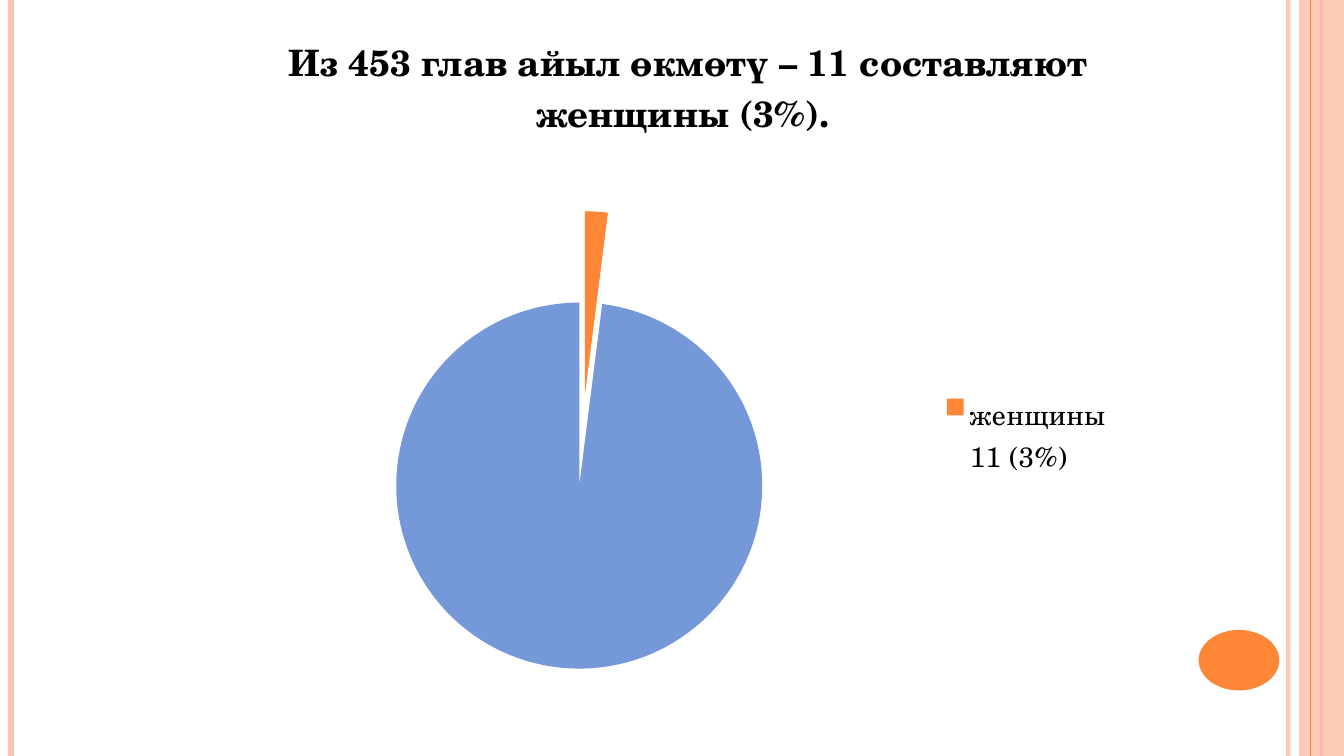
import pptx
import pptx.chart.data
import pptx.dml.color
import pptx.enum.chart
import pptx.enum.shapes
import pptx.enum.text
import pptx.oxml
import pptx.oxml.ns
import pptx.util

Pt = pptx.util.Pt
qn = pptx.oxml.ns.qn
WIDTH, HEIGHT = 960, 540
FONT = "TeX Gyre Schola"
COLORS = {
    "text": "000000",
    "peach": "FEC3AE",
    "orange": "FE8637",
    "blue": "7598D9",
    "red": "B32C16",
    "yellow": "F5CD2D",
}


def rgb(name):
    return pptx.dml.color.RGBColor.from_string(COLORS[name])


def child(parent, tag, **attributes):
    element = pptx.oxml.parse_xml(f"<{tag} {pptx.oxml.ns.nsdecls(tag.split(':')[0])}/>")
    for name, value in attributes.items():
        element.set(name, str(value))
    parent.append(element)
    return element


def set_opacity(shape, percent):
    for color in shape._element.spPr.iter(qn("a:srgbClr")):
        child(color, "a:alpha", val=percent * 1000)


def set_layout(parent, follower, x, y, w, h, inner=False):
    """Place a chart part by fractions of the chart, ahead of its follower."""
    for old in parent.findall(qn("c:layout")):
        parent.remove(old)
    layout = child(parent, "c:layout")
    manual = child(layout, "c:manualLayout")
    if inner:
        child(manual, "c:layoutTarget", val="inner")
    for mode in ("xMode", "yMode"):
        child(manual, f"c:{mode}", val="edge")
    for name, value in {"x": x, "y": y, "w": w, "h": h}.items():
        child(manual, f"c:{name}", val=value)
    parent.find(qn(follower)).addprevious(layout)


class SlideBuilder:
    def __init__(self, slide):
        self.slide = slide

    def title(self, text, left, top, width, height):
        box = self.slide.shapes.title
        box.left, box.top, box.width, box.height = map(Pt, (left, top, width, height))
        frame = box.text_frame
        frame.text = text
        frame.word_wrap = True
        frame.auto_size = pptx.enum.text.MSO_AUTO_SIZE.NONE
        frame.vertical_anchor = pptx.enum.text.MSO_ANCHOR.TOP
        para = frame.paragraphs[0]
        para.alignment = pptx.enum.text.PP_ALIGN.CENTER
        para.line_spacing = 1.15
        para.space_before = Pt(0)
        para.space_after = Pt(10)
        para.font.name = FONT
        para.font.size = Pt(26)
        para.font.bold = True
        para.font.color.rgb = rgb("text")

    def vertical_line(self, x, color, weight, opacity=100):
        line = self.slide.shapes.add_connector(
            pptx.enum.shapes.MSO_CONNECTOR.STRAIGHT, Pt(x), Pt(0), Pt(x), Pt(HEIGHT))
        line.line.color.rgb = rgb(color)
        line.line.width = Pt(weight)
        if opacity < 100:
            set_opacity(line, opacity)
        child(line._element.spPr, "a:effectLst")

    def shape(self, kind, color, left, top, width, height, opacity=100):
        shape = self.slide.shapes.add_shape(kind, *map(Pt, (left, top, width, height)))
        shape.shadow.inherit = False
        shape.fill.solid()
        shape.fill.fore_color.rgb = rgb(color)
        shape.line.fill.background()
        if opacity < 100:
            set_opacity(shape, opacity)

    def pie(self, categories, values, colors, left, top, width, height):
        data = pptx.chart.data.CategoryChartData()
        data.categories = categories
        data.add_series("Series 1", values)
        chart = self.slide.shapes.add_chart(
            pptx.enum.chart.XL_CHART_TYPE.PIE,
            *map(Pt, (left, top, width, height)), data).chart
        chart.has_title = False
        chart.font.name = FONT
        chart.font.size = Pt(10)
        chart.font.color.rgb = rgb("text")

        # Slices, all pulled out by a quarter of the radius
        plot = chart.plots[0]
        plot.vary_by_categories = True
        series = plot.series[0]
        for index, color in enumerate(colors):
            fill = series.points[index].format.fill
            fill.solid()
            fill.fore_color.rgb = rgb(color)
        explosion = child(series._element, "c:explosion", val=25)
        series._element.find(qn("c:dPt")).addprevious(explosion)
        plot_area = chart._chartSpace.chart.plotArea
        set_layout(plot_area, "c:pieChart", 0.14, 0.03, 0.51, 0.94, inner=True)

        # Legend, showing the first entry only
        chart.has_legend = True
        legend = chart.legend
        legend.position = pptx.enum.chart.XL_LEGEND_POSITION.RIGHT
        legend.include_in_layout = False
        legend.font.name = FONT
        legend.font.size = Pt(20)
        legend.font.color.rgb = rgb("text")
        anchor = legend._element.find(qn("c:legendPos"))
        for index in range(len(values) - 1, 0, -1):
            entry = child(legend._element, "c:legendEntry")
            child(entry, "c:idx", val=index)
            child(entry, "c:delete", val=1)
            anchor.addnext(entry)
        set_layout(legend._element, "c:overlay", 0.79, 0.4, 0.2, 0.18)


def main():
    deck = pptx.Presentation()
    deck.slide_width, deck.slide_height = Pt(WIDTH), Pt(HEIGHT)
    page = SlideBuilder(deck.slides.add_slide(deck.slide_layouts[5]))
    shapes = pptx.enum.shapes.MSO_SHAPE

    # Side stripes and page marker
    page.vertical_line(920.16, "peach", 3, opacity=93)
    page.vertical_line(7.92, "peach", 4.5)
    page.vertical_line(943.92, "orange", 1.5)
    page.shape(shapes.RECTANGLE, "peach", 928, 0, 32, HEIGHT, opacity=87)
    page.vertical_line(936, "orange", 0.75)
    page.shape(shapes.OVAL, "orange", 856.2, 450, 57.6, 43.2)

    # Headline
    page.title("Из 453 глав айыл өкмөтү – 11 составляют женщины (3%). ",
               168.2, 20.6, 646.5, 448)

    # Share of women
    page.pie(["женщины 11 (3%)", "", "", ""], [2, 98, None, None],
             ["orange", "blue", "red", "yellow"], 162.7, 139.7, 640.8, 349.2)

    deck.save("out.pptx")


if __name__ == "__main__":
    main()
